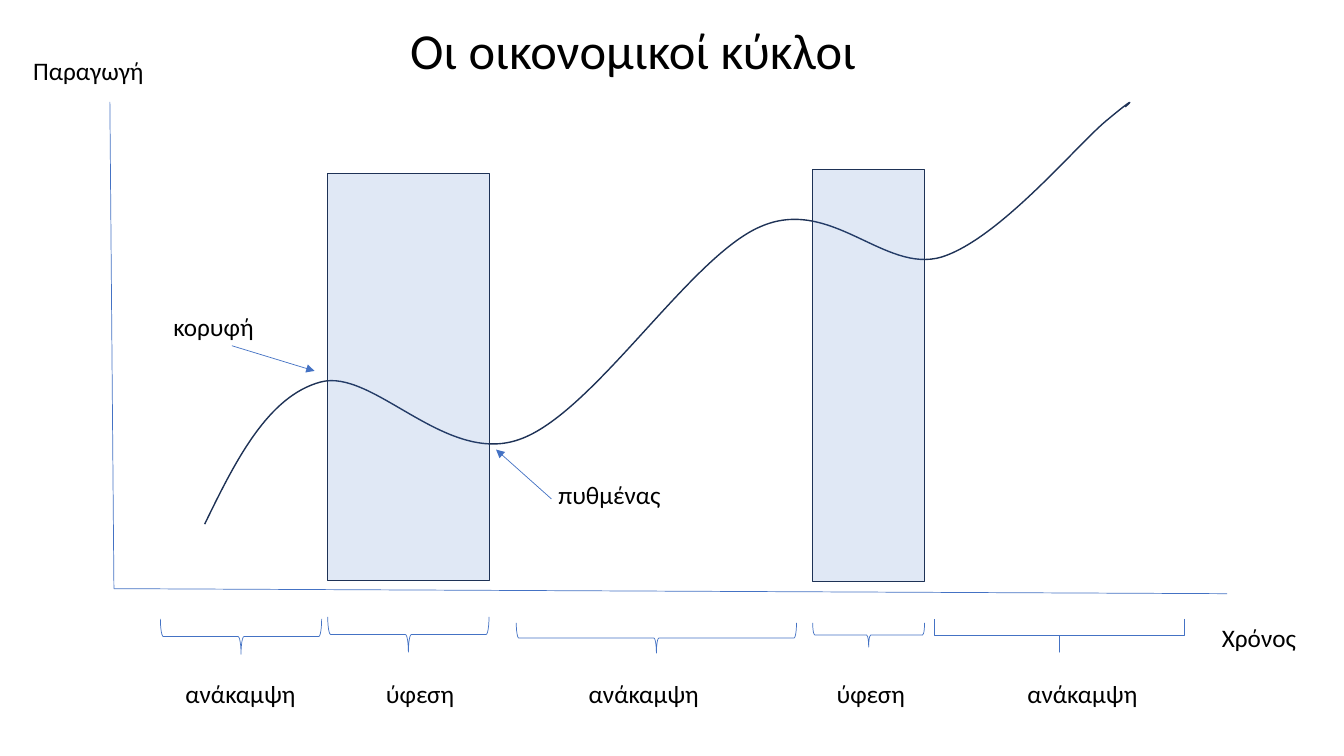
"""Build a slide that shows the phases of the economic cycle."""
from dataclasses import dataclass

from pptx import Presentation
from pptx.dml.color import RGBColor
from pptx.enum import shapes as kinds, text as txt
from pptx.oxml.ns import qn
from pptx.util import Inches, Pt
from lxml import etree

BLUE, NAVY, BLACK = "4472C4", "1E3256", "000000"
Point = tuple[float, float]


@dataclass
class Phase:
    name: str
    left: float
    span: float
    top: float
    depth: float
    label_left: float
    label_width: float
    bend: float = 0.08333


@dataclass
class Band:
    left: float
    top: float
    width: float
    height: float


@dataclass
class Label:
    words: str
    left: float
    top: float
    width: float


@dataclass
class Line:
    start: Point
    end: Point
    arrow: bool = False


PHASES = [
    Phase("ανάκαμψη", 1.59, 1.6, 6.14, 0.35, 1.74, 1.31),
    Phase("ύφεση", 3.25, 1.6, 6.12, 0.35, 3.73, 0.89),
    Phase("ανάκαμψη", 5.12, 2.78, 6.18, 0.3, 5.74, 1.31),
    Phase("ύφεση", 8.06, 1.11, 6.18, 0.24, 8.2, 0.89),
    Phase("ανάκαμψη", 9.27, 2.48, 6.14, 0.33, 10.09, 1.31, bend=0),
]
RECESSIONS = [Band(3.25, 1.72, 1.6, 4.04), Band(8.06, 1.68, 1.11, 4.09)]
LABELS = [
    Label("Παραγωγή", 0.23, 0.5, 1.31),
    Label("Χρόνος", 12.02, 6.12, 0.95),
    Label("κορυφή", 1.62, 3.04, 1.01),
    Label("πυθμένας", 5.44, 4.71, 1.23),
]
LINES = [
    Line((1.09, 1.01), (1.13, 5.84)),
    Line((12.17, 5.89), (1.13, 5.84)),
    Line((2.3, 3.43), (3.12, 3.68), arrow=True),
    Line((5.47, 4.95), (4.92, 4.46), arrow=True),
]
OUTPUT_FRAME = Band(2.03, 1.01, 9.18, 4.19)
OUTPUT_START = (2.03, 5.2)
OUTPUT_BENDS = [
    ((2.34, 4.56), (2.66, 3.93), (3.18, 3.79)),
    ((3.7, 3.65), (4.42, 4.62), (5.15, 4.36)),
    ((5.88, 4.11), (6.84, 2.55), (7.54, 2.25)),
    ((8.24, 1.94), (8.77, 2.72), (9.34, 2.55)),
    ((9.91, 2.37), (10.67, 1.45), (10.97, 1.2)),
    ((11.27, 0.95), (11.22, 1.01), (11.16, 1.06)),
]


def color(value: str) -> RGBColor:
    """Turn a hex string into a colour."""
    return RGBColor.from_string(value)


def stroke(item, value: str, width: float) -> None:
    """Set the line of a shape or connector."""
    item.line.color.rgb = color(value)
    item.line.width = Pt(width)


def place(item, area: Band) -> None:
    """Move and size a shape."""
    item.left, item.top = Inches(area.left), Inches(area.top)
    item.width, item.height = Inches(area.width), Inches(area.height)


def write(frame, words: str, *, size: float = 18, align=txt.PP_ALIGN.LEFT,
          anchor=txt.MSO_ANCHOR.TOP, wrap: bool = False, spacing: float = 1.0,
          fit=txt.MSO_AUTO_SIZE.SHAPE_TO_FIT_TEXT) -> None:
    """Put formatted text in a text frame."""
    frame.word_wrap = wrap
    frame.auto_size = fit
    frame.vertical_anchor = anchor
    paragraph = frame.paragraphs[0]
    paragraph.alignment = align
    paragraph.line_spacing = spacing
    run = paragraph.add_run()
    run.text = words
    run.font.name = "Calibri"
    run.font.size = Pt(size)
    run.font.color.rgb = color(BLACK)


def add_label(slide, label: Label) -> None:
    """Add a one-line label."""
    box = slide.shapes.add_textbox(Inches(label.left), Inches(label.top),
                                   Inches(label.width), Inches(0.4))
    write(box.text_frame, label.words)


def add_line(slide, line: Line) -> None:
    """Add an axis or a pointer."""
    ends = [Inches(value) for value in (*line.start, *line.end)]
    connector = slide.shapes.add_connector(kinds.MSO_CONNECTOR.STRAIGHT, *ends)
    stroke(connector, BLUE, 0.5)
    if line.arrow:
        outline = connector._element.spPr.find(qn("a:ln"))
        etree.SubElement(outline, qn("a:tailEnd"), type="triangle")
    etree.SubElement(connector._element.spPr, qn("a:effectLst"))


def add_band(slide, band: Band) -> None:
    """Add a translucent recession band."""
    area = slide.shapes.add_shape(kinds.MSO_SHAPE.RECTANGLE, 0, 0, 0, 0)
    place(area, band)
    area.shadow.inherit = False
    area.fill.solid()
    area.fill.fore_color.rgb = color(BLUE)
    tint = area._element.spPr.find(qn("a:solidFill")).find(qn("a:srgbClr"))
    etree.SubElement(tint, qn("a:alpha"), val="16000")
    stroke(area, NAVY, 0.25)


def add_phase(slide, phase: Phase) -> None:
    """Add a brace that opens upwards, with the phase name below."""
    shift = (phase.span - phase.depth) / 2
    brace = slide.shapes.add_shape(
        kinds.MSO_SHAPE.RIGHT_BRACE, Inches(phase.left + shift),
        Inches(phase.top - shift), Inches(phase.depth), Inches(phase.span))
    brace.rotation = 90
    brace.adjustments[0] = phase.bend
    brace.shadow.inherit = False
    brace.fill.background()
    stroke(brace, BLUE, 0.5)
    add_label(slide, Label(phase.name, phase.label_left, 6.68, phase.label_width))


def add_output_curve(slide) -> None:
    """Add the curve of output over time as joined cubic bends."""
    builder = slide.shapes.build_freeform(*map(Inches, OUTPUT_START))
    builder.add_line_segments([tuple(map(Inches, bend[-1])) for bend in OUTPUT_BENDS],
                              close=False)
    curve = builder.convert_to_shape()
    place(curve, OUTPUT_FRAME)
    outline = next(curve._element.iter(qn("a:path")))
    outline.set("w", str(curve.width))
    outline.set("h", str(curve.height))
    for step in list(outline):
        outline.remove(step)
    steps = [("a:moveTo", (OUTPUT_START,))]
    steps += [("a:cubicBezTo", bend) for bend in OUTPUT_BENDS]
    for tag, points in steps:
        step = etree.SubElement(outline, qn(tag))
        for x, y in points:
            etree.SubElement(step, qn("a:pt"), x=str(Inches(x) - curve.left),
                             y=str(Inches(y) - curve.top))
    curve.shadow.inherit = False
    curve.fill.background()
    stroke(curve, NAVY, 1)


def main() -> None:
    """Build and save the slide."""
    deck = Presentation()
    deck.slide_width, deck.slide_height = Inches(13.33), Inches(7.5)
    slide = deck.slides.add_slide(deck.slide_layouts[5])
    title = slide.shapes.title
    place(title, Band(3.44, 0.28, 5.68, 0.5))
    write(title.text_frame, "Οι οικονομικοί κύκλοι", size=36, wrap=True,
          align=txt.PP_ALIGN.CENTER, anchor=txt.MSO_ANCHOR.MIDDLE, spacing=0.9,
          fit=txt.MSO_AUTO_SIZE.NONE)
    add_output_curve(slide)
    for add, parts in ((add_band, RECESSIONS), (add_line, LINES),
                       (add_phase, PHASES), (add_label, LABELS)):
        for part in parts:
            add(slide, part)
    deck.save("out.pptx")


if __name__ == "__main__":
    main()
